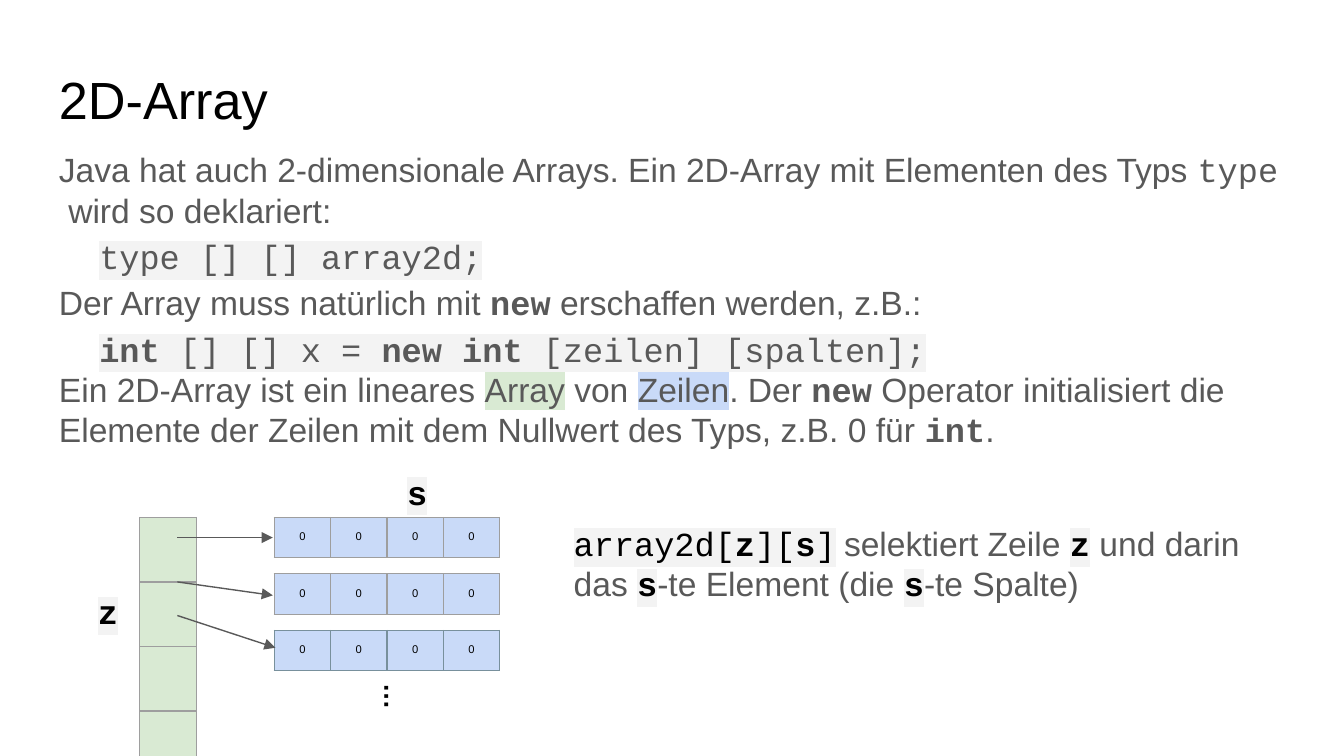
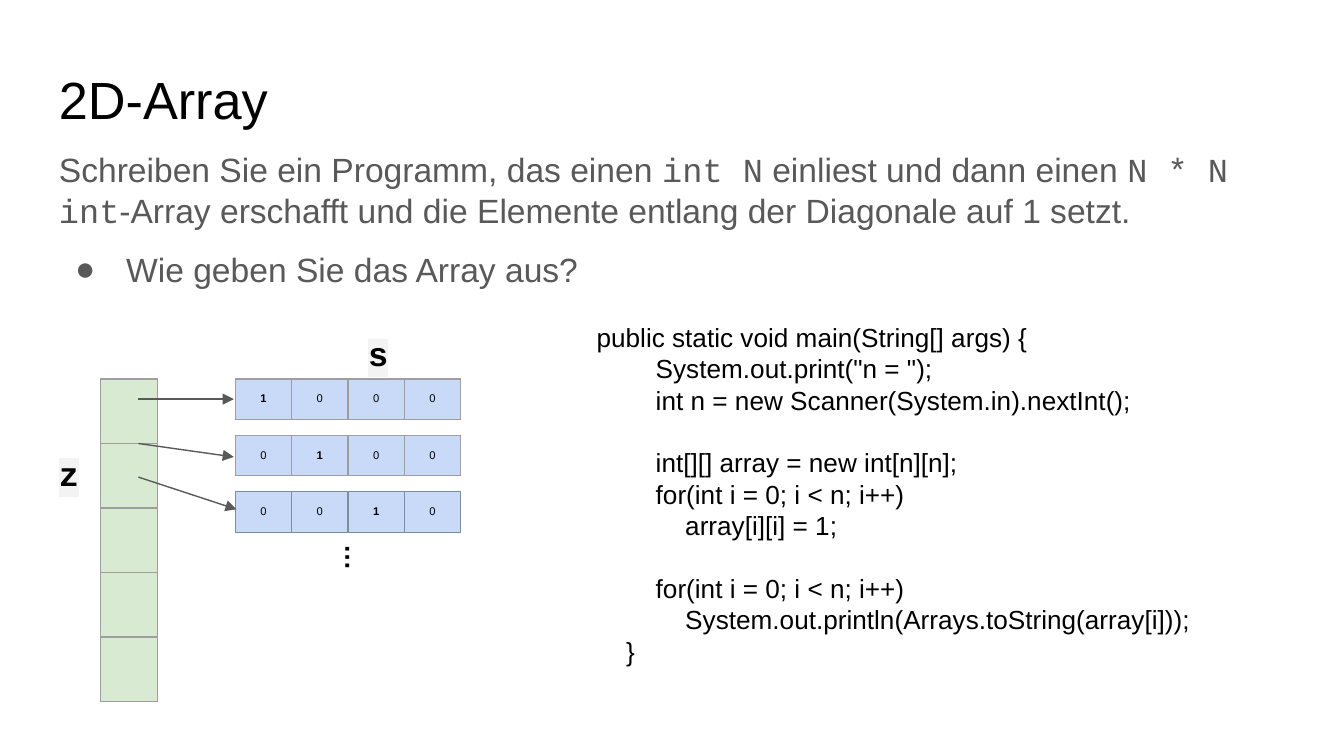
from lxml.etree import SubElement
from pptx import Presentation
from pptx.dml.color import RGBColor as RGB
from pptx.enum.shapes import MSO_CONNECTOR as Connector
from pptx.enum.text import MSO_ANCHOR as Anchor, PP_ALIGN as Align
from pptx.oxml import parse_xml
from pptx.oxml.ns import nsdecls, qn
from pptx.util import Inches, Pt

BLACK = RGB(0x00, 0x00, 0x00)
GREY = RGB(0x59, 0x59, 0x59)
CODE_BACK = RGB(0xF3, 0xF3, 0xF3)
GREEN = RGB(0xD9, 0xEA, 0xD3)
BLUE = RGB(0xC9, 0xDA, 0xF8)
BORDER = RGB(0x9E, 0x9E, 0x9E)
DARK_BORDER = RGB(0x78, 0x90, 0x9C)

SANS, MONO = "Arial", "Courier New"
WIDTH = 10
HEIGHT = WIDTH * 9 / 16
MARGIN = 0.34
CONTENT = WIDTH - 2 * MARGIN
INSET = Inches(0.1)

# Array drawing: cell width, heights of the two cell kinds, row pitch
CELL, ROW_CELL, COLUMN_CELL = 0.42, 0.29, 0.48
ROW_PITCH = 0.42
CODE_LEVEL = 0.22

# Span formats
TYPE = dict(font=MONO)
KEYWORD = dict(font=MONO, bold=True)
CODE = dict(font=MONO, back=CODE_BACK)
CODE_KEYWORD = dict(CODE, bold=True)
BLACK_CODE = dict(CODE, color=BLACK)
INDEX = dict(CODE_KEYWORD, color=BLACK)


def add_span(para, text, size=18, font=SANS, color=GREY, bold=False, back=None):
    span = para.add_run()
    span.text = text
    span.font.size = Pt(size)
    span.font.name = font
    span.font.bold = bold
    span.font.color.rgb = color
    if back is not None:
        highlight = parse_xml(
            f'<a:highlight {nsdecls("a")}><a:srgbClr val="{back}"/></a:highlight>')
        span.font.fill._xPr.find(qn("a:solidFill")).addnext(highlight)


def format_para(para, spacing=None, before=0, indent=0, hanging=0, bullet=None):
    if spacing:
        para.line_spacing = spacing
    para.space_before = Pt(before)
    properties = para._p.get_or_add_pPr()
    properties.set("marL", str(Inches(indent)))
    properties.set("indent", str(Inches(-hanging)))
    if bullet:
        color = SubElement(properties, qn("a:buClr"))
        SubElement(color, qn("a:srgbClr"), val=str(GREY))
        SubElement(properties, qn("a:buSzPts"), val="1800")
        SubElement(properties, qn("a:buFont"), typeface=SANS)
        SubElement(properties, qn("a:buChar"), char=bullet)


def add_text(page, area, paras, anchor=Anchor.TOP, rotation=0, **base):
    """Each para is (spans, para format); a span is (text, span format)."""
    box = page.shapes.add_textbox(*map(Inches, area))
    box.rotation = rotation
    frame = box.text_frame
    frame.word_wrap = True
    frame.vertical_anchor = anchor
    frame.margin_left = frame.margin_right = INSET
    frame.margin_top = frame.margin_bottom = INSET
    for number, (spans, para_format) in enumerate(paras):
        para = frame.add_paragraph() if number else frame.paragraphs[0]
        format_para(para, **para_format)
        for text, span_format in spans:
            add_span(para, text, **{**base, **span_format})


def add_label(page, area, text, **formats):
    add_text(page, area, [([(text, {})], {})], **formats)


def add_cells(page, left, top, values, cell_height, fill, border):
    """Draw a grid of equal cells; a None value leaves its cell empty."""
    rows, columns = len(values), len(values[0])
    table = page.shapes.add_table(
        rows, columns, Inches(left), Inches(top),
        Inches(columns * CELL), Inches(rows * cell_height)).table
    table.first_row = table.horz_banding = False
    for column in table.columns:
        column.width = Inches(CELL)
    for row, row_values in zip(table.rows, values):
        row.height = Inches(cell_height)
        for cell, value in zip(row.cells, row_values):
            cell.margin_left = cell.margin_right = INSET
            cell.fill.solid()
            cell.fill.fore_color.rgb = fill
            set_borders(cell, border)
            if value is not None:
                cell.margin_top = cell.margin_bottom = INSET
                para = cell.text_frame.paragraphs[0]
                para.alignment = Align.CENTER
                add_span(para, str(value), size=6, color=BLACK, bold=value == 1)


def set_borders(cell, color):
    properties = cell._tc.get_or_add_tcPr()
    for position, side in enumerate("LRTB"):
        properties.insert(position, parse_xml(
            f'<a:ln{side} {nsdecls("a")} w="{Pt(0.75)}"><a:solidFill>'
            f'<a:srgbClr val="{color}"/></a:solidFill></a:ln{side}>'))


def add_arrow(page, *ends):
    arrow = page.shapes.add_connector(Connector.STRAIGHT, *map(Inches, ends))
    arrow.line.color.rgb = GREY
    arrow.line.width = Pt(0.75)
    SubElement(arrow.line._get_or_add_ln(), qn("a:tailEnd"), type="triangle")
    SubElement(arrow._element.spPr, qn("a:effectLst"))


def add_array(page, left, top, rows):
    """Column of row references, the rows they point to, and index labels."""
    add_label(page, (left + 1.89, top - 0.44, 0.35, 0.47), "s", **INDEX)
    add_label(page, (left - 0.41, top + 0.45, 0.35, 0.47), "z", **INDEX)
    add_cells(page, left, top, [[None]] * 5, COLUMN_CELL, GREEN, BORDER)
    borders = (BORDER, BORDER, DARK_BORDER)
    for number, (values, border) in enumerate(zip(rows, borders)):
        add_cells(page, left + 1, top + number * ROW_PITCH, [values],
                  ROW_CELL, BLUE, border)
    add_label(page, (left + 1.73, top + 1.17, CELL, 0.35), "…",
              rotation=90, size=14, color=BLACK, bold=True)
    for start, end_x, end_y in ((0.15, 0.99, 0.15), (0.48, 0.99, 0.58),
                                (0.73, 1.01, 0.97)):
        add_arrow(page, left + 0.28, top + start, left + end_x, top + end_y)


def add_page(deck, title):
    page = deck.slides.add_slide(deck.slide_layouts[6])
    add_label(page, (MARGIN, 0.4, CONTENT, 0.63), title, size=28, color=BLACK)
    return page


def add_declaration_page(deck):
    page = add_page(deck, "2D-Array")
    loose = dict(spacing=1.15)
    code_line = dict(spacing=1.15, indent=0.3)
    add_text(page, (MARGIN, 1.01, CONTENT, 2.58), [
        ([("Java hat auch 2-dimensionale Arrays. "
           "Ein 2D-Array mit Elementen des Typs ", {}),
          ("type", TYPE), ("  wird so deklariert:", {})], {}),
        ([("type [] [] array2d;", CODE)], code_line),
        ([("Der Array muss natürlich mit ", {}), ("new", KEYWORD),
          (" erschaffen werden, z.B.:", {})], loose),
        ([("int", CODE_KEYWORD), (" [] [] x = ", CODE),
          ("new", CODE_KEYWORD), (" ", CODE), ("int", CODE_KEYWORD),
          (" [zeilen] [spalten];", CODE)], code_line),
        ([("Ein 2D-Array ist ein lineares ", {}), ("Array", dict(back=GREEN)),
          (" von ", {}), ("Zeilen", dict(back=BLUE)), (". Der ", {}),
          ("new", KEYWORD),
          (" Operator initialisiert die Elemente der Zeilen "
           "mit dem Nullwert des Typs, z.B. 0 für ", {}),
          ("int", KEYWORD), (".", {})], {}),
    ])
    add_array(page, 1.04, 3.85, [[0] * 4] * 3)
    add_text(page, (4.17, 3.77, 5.49, 0.84), [
        ([("array2d[", BLACK_CODE), ("z", INDEX), ("][", BLACK_CODE),
          ("s", INDEX), ("]", BLACK_CODE), (" ", dict(size=16)),
          ("selektiert Zeile ", {}), ("z", INDEX), (" und darin das ", {}),
          ("s", INDEX), ("-te Element (die ", {}), ("s", INDEX),
          ("-te Spalte)", {})], {}),
    ], anchor=Anchor.MIDDLE)


def add_exercise_page(deck):
    page = add_page(deck, "2D-Array")
    add_text(page, (MARGIN, 1.01, CONTENT, 1.36), [
        ([("Schreiben Sie ein Programm, das einen ", {}), ("int N", TYPE),
          (" einliest und dann einen ", {}), ("N * N int", TYPE),
          ("-Array erschafft und die Elemente entlang "
           "der Diagonale auf 1 setzt.", {})], {}),
        ([("Wie geben Sie das Array aus?", {})],
         dict(before=10, indent=0.5, hanging=0.38, bullet="●")),
    ])
    identity = [[int(row == column) for column in range(4)] for row in range(3)]
    add_array(page, 0.75, 2.82, identity)

    # Solution: indent level, space before, code
    block_gap = 16.8
    solution = [
        (0, 0, "public static void main(String[] args) {"),
        (2, 0, 'System.out.print("n = ");'),
        (2, 0, "int n = new Scanner(System.in).nextInt();"),
        (2, block_gap, "int[][] array = new int[n][n];"),
        (2, 0, "for(int i = 0; i < n; i++)"),
        (3, 0, "array[i][i] = 1;"),
        (2, block_gap, "for(int i = 0; i < n; i++)"),
        (3, 0, "System.out.println(Arrays.toString(array[i]));"),
        (1, 0, "}"),
    ]
    paras = [([(code, {})], dict(indent=level * CODE_LEVEL, before=gap))
             for level, gap, code in solution]
    add_text(page, (4.34, 2.29, 5.31, 3.03), paras, size=14, color=BLACK)


def main():
    deck = Presentation()
    deck.slide_width, deck.slide_height = Inches(WIDTH), Inches(HEIGHT)
    add_declaration_page(deck)
    add_exercise_page(deck)
    deck.save("out.pptx")


if __name__ == "__main__":
    main()
